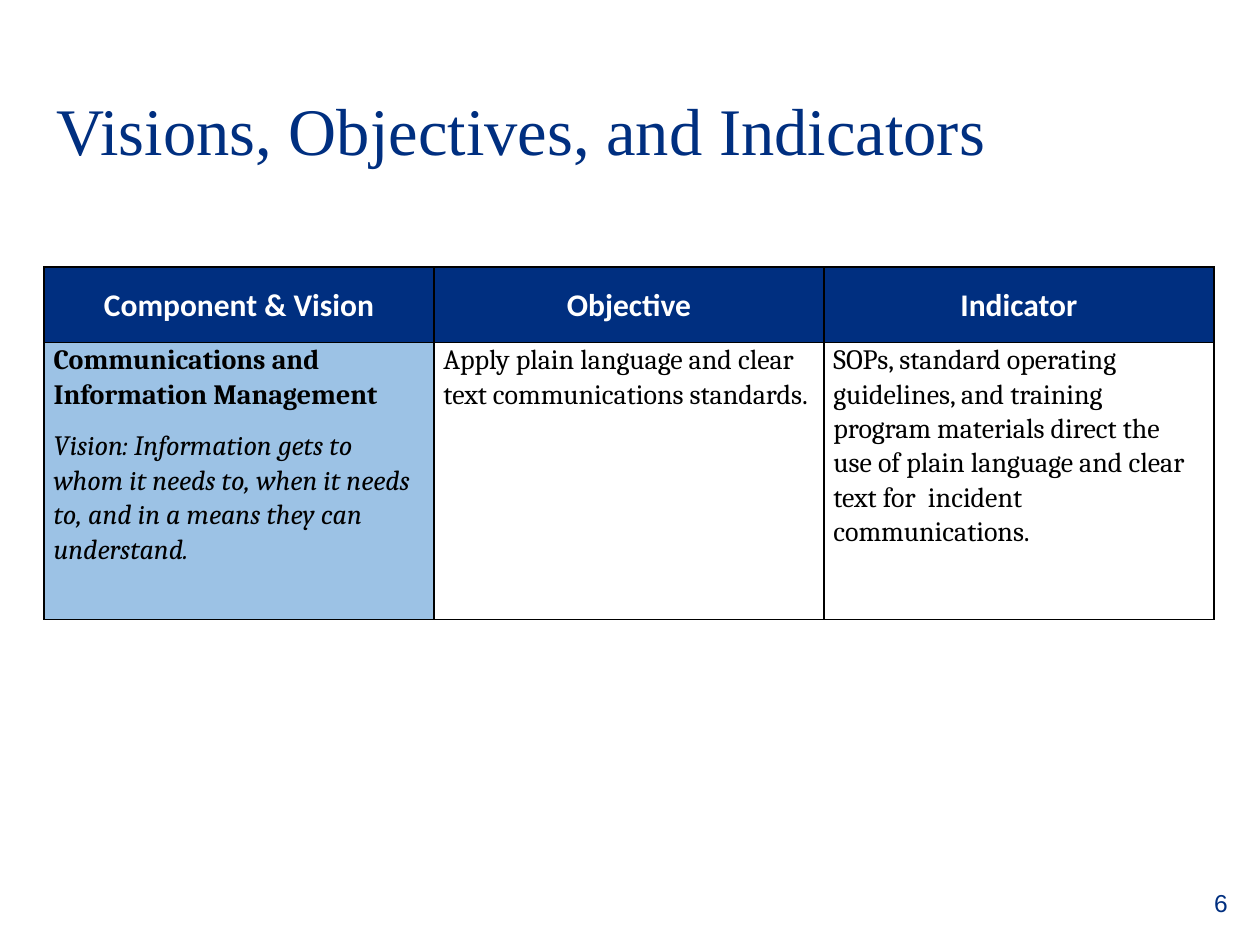
import pptx
import pptx.dml.color
import pptx.enum.text
import pptx.oxml
import pptx.oxml.ns
import pptx.util

Cm = pptx.util.Cm
Pt = pptx.util.Pt
PP_ALIGN = pptx.enum.text.PP_ALIGN
ANCHOR = pptx.enum.text.MSO_ANCHOR

COLOURS = {"navy": "002F80", "sky": "9CC2E5", "white": "FFFFFF", "black": "000000"}


def format_paragraph(paragraph, font_name, size, colour, bold=False, italic=False):
    for run in paragraph.runs:
        run.font.name = font_name
        run.font.size = Pt(size)
        run.font.bold = bold
        run.font.italic = italic
        run.font.color.rgb = pptx.dml.color.RGBColor.from_string(COLOURS[colour])


def add_borders(cell, colour):
    """Draw a 1 pt line on all four sides; call before setting the cell's fill."""
    properties = cell._tc.get_or_add_tcPr()
    for side in ("lnL", "lnR", "lnT", "lnB"):
        properties.append(pptx.oxml.parse_xml(
            f'<a:{side} {pptx.oxml.ns.nsdecls("a")} w="{Pt(1)}"><a:solidFill>'
            f'<a:srgbClr val="{COLOURS[colour]}"/></a:solidFill></a:{side}>'))


presentation = pptx.Presentation()
presentation.slide_width = Cm(25.4)
presentation.slide_height = Cm(19.05)
slide = presentation.slides.add_slide(presentation.slide_layouts[6])

# Title and page number
title = slide.shapes.add_textbox(Cm(0.89), Cm(1.47), Cm(23.57), Cm(1.78))
title.text_frame.word_wrap = True
title.text_frame.margin_top = Cm(0.32)
title.text_frame.text = "Visions, Objectives, and Indicators"
format_paragraph(title.text_frame.paragraphs[0], "Times New Roman", 38, "navy")

page_number = slide.shapes.add_textbox(Cm(16.31), Cm(17.78), Cm(8.69), Cm(1.32))
page_number.text_frame.word_wrap = True
page_number.text_frame.text = "6"
page_number.text_frame.paragraphs[0].alignment = PP_ALIGN.RIGHT
format_paragraph(page_number.text_frame.paragraphs[0], "Arial", 14, "navy")

# Table of visions, objectives and indicators
rows = [
    ["Component & Vision", "Objective", "Indicator"],
    [
        "Communications and Information Management\n"
        "Vision: Information gets to whom it needs to, when it needs to, "
        "and in a means they can understand.",
        "Apply plain language and clear text communications standards.",
        "SOPs, standard operating guidelines, and training program materials direct "
        "the use of plain language and clear text for  incident communications.",
    ],
]
row_heights = [Cm(1.52), Cm(5.59)]
table = slide.shapes.add_table(
    len(rows), len(rows[0]), Cm(0.89), Cm(5.38), Cm(23.58), sum(row_heights)).table
for column in table.columns:
    column.width = Cm(7.86)

for row_index, texts in enumerate(rows):
    table.rows[row_index].height = row_heights[row_index]
    is_header = row_index == 0
    for column_index, text in enumerate(texts):
        is_vision = not is_header and column_index == 0
        cell = table.cell(row_index, column_index)
        add_borders(cell, "black")
        fill_colour = "navy" if is_header else "sky" if is_vision else "white"
        cell.fill.solid()
        cell.fill.fore_color.rgb = pptx.dml.color.RGBColor.from_string(COLOURS[fill_colour])
        cell.margin_left = cell.margin_right = Cm(0.19)
        cell.margin_top = cell.margin_bottom = 0
        cell.vertical_anchor = ANCHOR.MIDDLE if is_header else ANCHOR.TOP
        cell.text_frame.text = text
        for paragraph_index, paragraph in enumerate(cell.text_frame.paragraphs):
            paragraph.line_spacing = 1.07
            if is_header:
                paragraph.alignment = PP_ALIGN.CENTER
                format_paragraph(paragraph, "Calibri", 18, "white", bold=True)
            else:
                format_paragraph(paragraph, "Cambria", 16, "black",
                                 bold=is_vision and paragraph_index == 0,
                                 italic=is_vision and paragraph_index == 1)

table.cell(1, 0).text_frame.paragraphs[0].space_after = Pt(10)

presentation.save("out.pptx")
